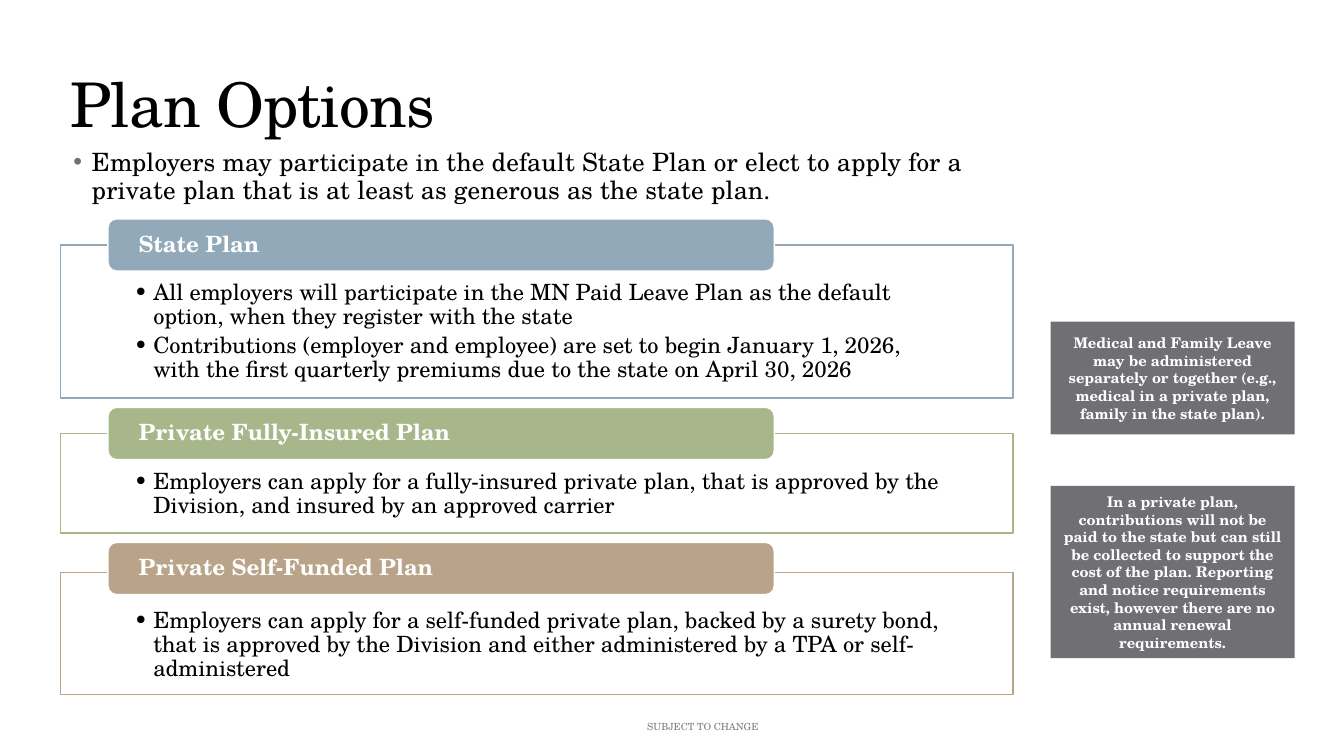
from lxml import etree
from pptx import Presentation
from pptx.dml.color import RGBColor
from pptx.enum import shapes, text
from pptx.oxml import ns
from pptx.util import Inches, Pt

FONT = "TeX Gyre Schola"
BLACK = RGBColor(0x00, 0x00, 0x00)
WHITE = RGBColor(0xFF, 0xFF, 0xFF)
GRAY = RGBColor(0x6F, 0x6F, 0x74)
FOOTER_GRAY = RGBColor(0x80, 0x80, 0x80)
BLUE = RGBColor(0x92, 0xA9, 0xB9)
GREEN = RGBColor(0xA7, 0xB7, 0x89)
TAN = RGBColor(0xB9, 0xA4, 0x89)

# Heading, colour, tab top, card top, card height, points
PLANS = [
    ("State Plan", BLUE, 2.17, 2.43, 1.52, [
        "All employers will participate in the MN Paid Leave Plan as the default "
        "option, when they register with the state",
        "Contributions (employer and employee) are set to begin January 1, 2026, "
        "with the first quarterly premiums due to the state on April 30, 2026"]),
    ("Private Fully-Insured Plan", GREEN, 4.04, 4.3, 0.99, [
        "Employers can apply for a fully-insured private plan, that is approved by "
        "the Division, and insured by an approved carrier"]),
    ("Private Self-Funded Plan", TAN, 5.38, 5.68, 1.21, [
        "Employers can apply for a self-funded private plan, backed by a surety "
        "bond, that is approved by the Division and either administered by a TPA or "
        "self-administered"]),
]

# Top, height, wording
NOTES = [
    (3.19, 1.12,
     "Medical and Family Leave may be administered separately or together (e.g., "
     "medical in a private plan, family in the state plan)."),
    (4.82, 1.71,
     "In a private plan, contributions will not be paid to the state but can still "
     "be collected to support the cost of the plan. Reporting and notice "
     "requirements exist, however there are no annual renewal requirements."),
]


def place(s, left, top, width, height):
    s.left, s.top = Inches(left), Inches(top)
    s.width, s.height = Inches(width), Inches(height)


def set_frame(tf, anchor, insets=(0.1, 0.05, 0.1, 0.05)):
    tf.word_wrap = True
    tf.auto_size = text.MSO_AUTO_SIZE.NONE
    tf.vertical_anchor = anchor
    tf.margin_left, tf.margin_top, tf.margin_right, tf.margin_bottom = map(Inches, insets)


def write(p, words, size, color, bold=False, align=text.PP_ALIGN.LEFT,
          line=1.0, after=0, tracking=0):
    p.alignment = align
    p.line_spacing = line
    p.space_before, p.space_after = Pt(0), Pt(after)
    r = p.add_run()
    r.text = words
    r.font.name, r.font.size, r.font.bold = FONT, Pt(size), bold
    r.font.color.rgb = color
    if tracking:
        r._r.get_or_add_rPr().set("spc", str(tracking))


def add_bullet(p, indent, color, percent):
    pPr = p._p.get_or_add_pPr()
    pPr.set("marL", str(Inches(indent)))
    pPr.set("indent", str(-Inches(indent)))
    clr = etree.SubElement(pPr, ns.qn("a:buClr"))
    etree.SubElement(clr, ns.qn("a:srgbClr"), val=str(color))
    etree.SubElement(pPr, ns.qn("a:buSzPct"), val=str(percent * 1000))
    etree.SubElement(pPr, ns.qn("a:buFont"), typeface=FONT)
    etree.SubElement(pPr, ns.qn("a:buChar"), char="•")


def add_box(slide, kind, box, fill, line=None):
    sp = slide.shapes.add_shape(kind, *map(Inches, box))
    sp.shadow.inherit = False
    sp.fill.solid()
    sp.fill.fore_color.rgb = fill
    if line is None:
        sp.line.fill.background()
    else:
        sp.line.color.rgb = line
        sp.line.width = Pt(1.1)
    return sp


def add_plan(slide, heading, color, tab_top, card_top, card_height, points):
    # Outlined card with the points
    card = add_box(slide, shapes.MSO_SHAPE.RECTANGLE,
                   (0.6, card_top, 9.45, card_height), WHITE, color)
    tf = card.text_frame
    set_frame(tf, text.MSO_ANCHOR.TOP, (0.73, 0.36, 0.73, 0.12))
    for i, point in enumerate(points):
        p = tf.add_paragraph() if i else tf.paragraphs[0]
        add_bullet(p, 0.19, BLACK, 100)
        write(p, point, 16, BLACK, line=0.9, after=3)

    # Coloured heading tab
    tab = add_box(slide, shapes.MSO_SHAPE.ROUNDED_RECTANGLE,
                  (1.07, tab_top, 6.61, 0.52), color, WHITE)
    set_frame(tab.text_frame, text.MSO_ANCHOR.MIDDLE, (0.28, 0, 0.28, 0))
    write(tab.text_frame.paragraphs[0], heading, 16, WHITE, bold=True, line=0.9)


def add_note(slide, top, height, words):
    note = add_box(slide, shapes.MSO_SHAPE.RECTANGLE, (10.42, top, 2.42, height), GRAY)
    set_frame(note.text_frame, text.MSO_ANCHOR.MIDDLE)
    write(note.text_frame.paragraphs[0], words, 10.5, WHITE, bold=True,
          align=text.PP_ALIGN.CENTER)


def main():
    prs = Presentation()
    prs.slide_width, prs.slide_height = Inches(13.33), Inches(7.5)
    slide = prs.slides.add_slide(prs.slide_layouts[1])

    # Title
    title = slide.shapes.title
    place(title, 0.6, 0.25, 12, 1.2)
    set_frame(title.text_frame, text.MSO_ANCHOR.BOTTOM)
    write(title.text_frame.paragraphs[0], "Plan Options", 44, BLACK,
          line=0.9, tracking=-50)

    # Introduction
    body = slide.placeholders[1]
    place(body, 0.61, 1.42, 9.44, 0.6)
    set_frame(body.text_frame, text.MSO_ANCHOR.TOP)
    p = body.text_frame.paragraphs[0]
    add_bullet(p, 0.2, GRAY, 80)
    write(p, "Employers may participate in the default State Plan or elect to apply "
          "for a private plan that is at least as generous as the state plan.",
          18, BLACK, line=0.95, after=2, tracking=10)

    # Plans and side notes
    for plan in PLANS:
        add_plan(slide, *plan)
    for note in NOTES:
        add_note(slide, *note)

    # Footer
    footer = slide.shapes.add_textbox(*map(Inches, (5.32, 7.1, 2.3, 0.22)))
    set_frame(footer.text_frame, text.MSO_ANCHOR.TOP)
    write(footer.text_frame.paragraphs[0], "SUBJECT TO CHANGE", 7, FOOTER_GRAY,
          align=text.PP_ALIGN.RIGHT)

    prs.save("out.pptx")


if __name__ == "__main__":
    main()
